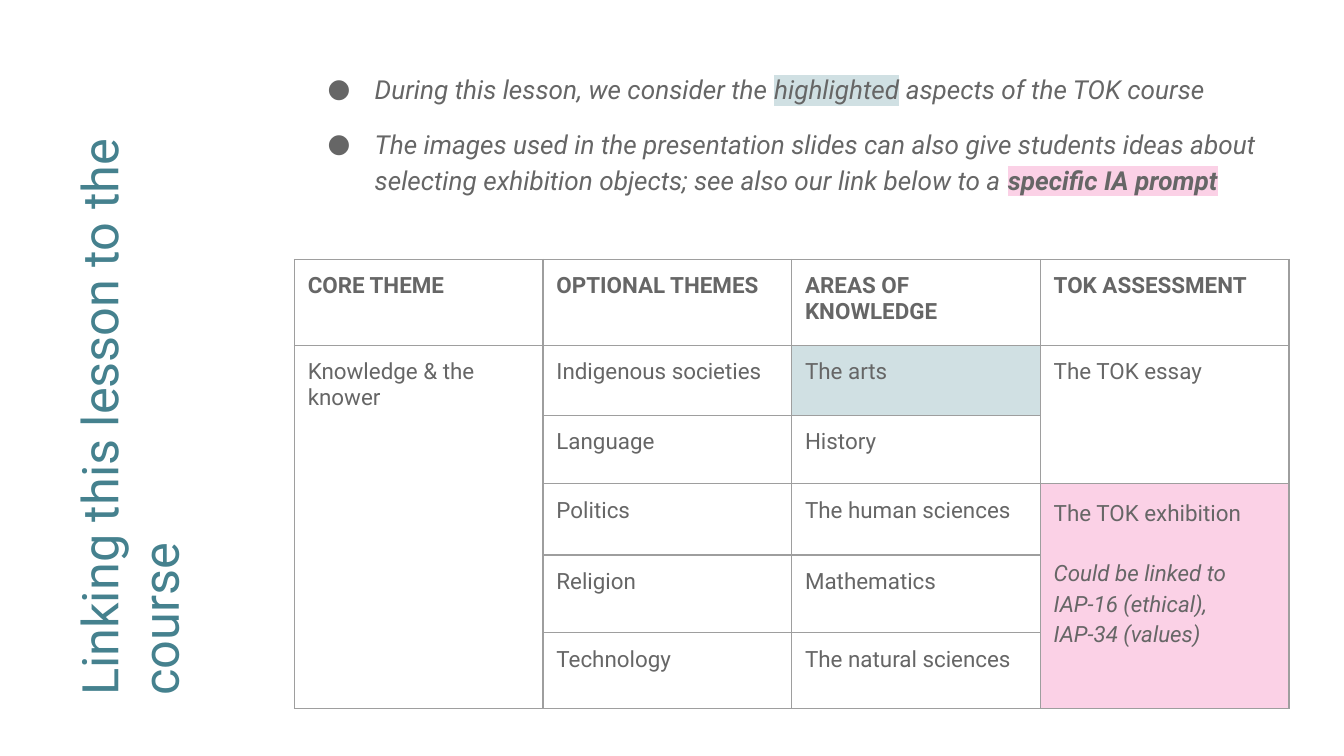
from lxml.etree import SubElement
from pptx import Presentation
from pptx.dml.color import RGBColor
from pptx.enum.text import MSO_ANCHOR
from pptx.oxml import parse_xml
from pptx.oxml.ns import nsdecls, qn
from pptx.util import Inches, Pt

COLORS = {"teal": "45818E", "gray": "666666", "line": "9E9E9E",
          "white": "FFFFFF", "blue": "D0E0E3", "pink": "FBD1E6"}
FONT = "Roboto"

TITLE = "Linking this lesson to the course"
# Each bullet is a list of (text, format) spans.
BULLETS = [
    [("During this lesson, we consider the ", {}),
     ("highlighted", {"highlight": "blue"}),
     (" aspects of the TOK course", {})],
    [("The images used in the presentation slides can also give students ideas about "
      "selecting exhibition objects; see also our link below to a ", {}),
     ("specific IA prompt", {"bold": True, "highlight": "pink"})],
]
ROWS = [
    ["CORE THEME", "OPTIONAL THEMES", "AREAS OF KNOWLEDGE", "TOK ASSESSMENT"],
    ["Knowledge & the knower", "Indigenous societies", "The arts", "The TOK essay"],
    [None, "Language", "History", None],
    [None, "Politics", "The human sciences", "The TOK exhibition"],
    [None, "Religion", "Mathematics", None],
    [None, "Technology", "The natural sciences", None],
]
EXHIBITION_NOTE = "Could be linked to IAP-16 (ethical), IAP-34 (values)"
ROW_HEIGHTS = [0.64, 0.52, 0.51, 0.53, 0.58, 0.56]
COLUMN_WIDTH = 1.85
MERGES = [((1, 0), (5, 0)), ((1, 3), (2, 3)), ((3, 3), (5, 3))]
EXHIBITION = (3, 3)
CELL_FILLS = {(1, 2): "blue", EXHIBITION: "pink"}


def rgb(name):
    return RGBColor.from_string(COLORS[name])


def add_span(para, text, size=12, color="gray", bold=False, italic=False, highlight=None):
    span = para.add_run()
    span.text = text
    font = span.font
    font.name, font.size, font.bold, font.italic = FONT, Pt(size), bold, italic
    font.color.rgb = rgb(color)
    if highlight:
        mark = parse_xml(f'<a:highlight {nsdecls("a")}>'
                         f'<a:srgbClr val="{COLORS[highlight]}"/></a:highlight>')
        font._element.find(qn("a:solidFill")).addnext(mark)


def set_margins(frame):
    frame.margin_left = frame.margin_right = Inches(0.1)
    frame.margin_top = frame.margin_bottom = Inches(0.1)


def add_box(page, left, top, width, height):
    box = page.shapes.add_textbox(*map(Inches, (left, top, width, height)))
    frame = box.text_frame
    frame.word_wrap = True
    frame.vertical_anchor = MSO_ANCHOR.TOP
    set_margins(frame)
    return box


def set_bullet(para):
    props = para._p.get_or_add_pPr()
    props.set("marL", str(Inches(0.5)))
    props.set("indent", str(Inches(-0.35)))
    color = SubElement(props, qn("a:buClr"))
    SubElement(color, qn("a:srgbClr"), val=COLORS["gray"])
    SubElement(props, qn("a:buSzPts"), val="1400")
    SubElement(props, qn("a:buFont"), typeface=FONT)
    SubElement(props, qn("a:buChar"), char="●")


def set_borders(cell):
    props = cell._tc.get_or_add_tcPr()
    for index, side in enumerate(("lnL", "lnR", "lnT", "lnB")):
        props.insert(index, parse_xml(
            f'<a:{side} {nsdecls("a")} w="{Pt(0.75)}"><a:solidFill>'
            f'<a:srgbClr val="{COLORS["line"]}"/></a:solidFill></a:{side}>'))


def add_title(page):
    box = add_box(page, -1.32, 2.13, 4.87, 1.42)
    box.rotation = 270
    add_span(box.text_frame.paragraphs[0], TITLE, size=27, color="teal")


def add_bullets(page):
    frame = add_box(page, 2.19, 0.41, 7.47, 1.22).text_frame
    for index, spans in enumerate(BULLETS):
        para = frame.add_paragraph() if index else frame.paragraphs[0]
        set_bullet(para)
        para.line_spacing = 1.15
        if index:
            para.space_before = Pt(10)
        for text, style in spans:
            add_span(para, text, size=14, italic=True, **style)


def add_course_table(page):
    columns = len(ROWS[0])
    table = page.shapes.add_table(
        len(ROWS), columns, Inches(2.19), Inches(1.93),
        Inches(COLUMN_WIDTH * columns), Inches(sum(ROW_HEIGHTS))).table
    table.first_row = table.horz_banding = False
    for column in table.columns:
        column.width = Inches(COLUMN_WIDTH)
    for row, height in zip(table.rows, ROW_HEIGHTS):
        row.height = Inches(height)
    for start, end in MERGES:
        table.cell(*start).merge(table.cell(*end))

    for r, texts in enumerate(ROWS):
        for c, text in enumerate(texts):
            cell = table.cell(r, c)
            set_margins(cell)
            cell.fill.solid()
            cell.fill.fore_color.rgb = rgb(CELL_FILLS.get((r, c), "white"))
            set_borders(cell)
            if text:
                add_span(cell.text_frame.paragraphs[0], text, bold=r == 0)

    frame = table.cell(*EXHIBITION).text_frame
    note = frame.add_paragraph()
    note.space_before = Pt(16)
    add_span(note, EXHIBITION_NOTE, italic=True)
    for para in frame.paragraphs:
        para.line_spacing = 1.15


def main():
    deck = Presentation()
    deck.slide_width = Inches(10)
    deck.slide_height = deck.slide_width * 9 // 16
    page = deck.slides.add_slide(deck.slide_layouts[6])
    add_title(page)
    add_bullets(page)
    add_course_table(page)
    deck.save("out.pptx")


if __name__ == "__main__":
    main()
